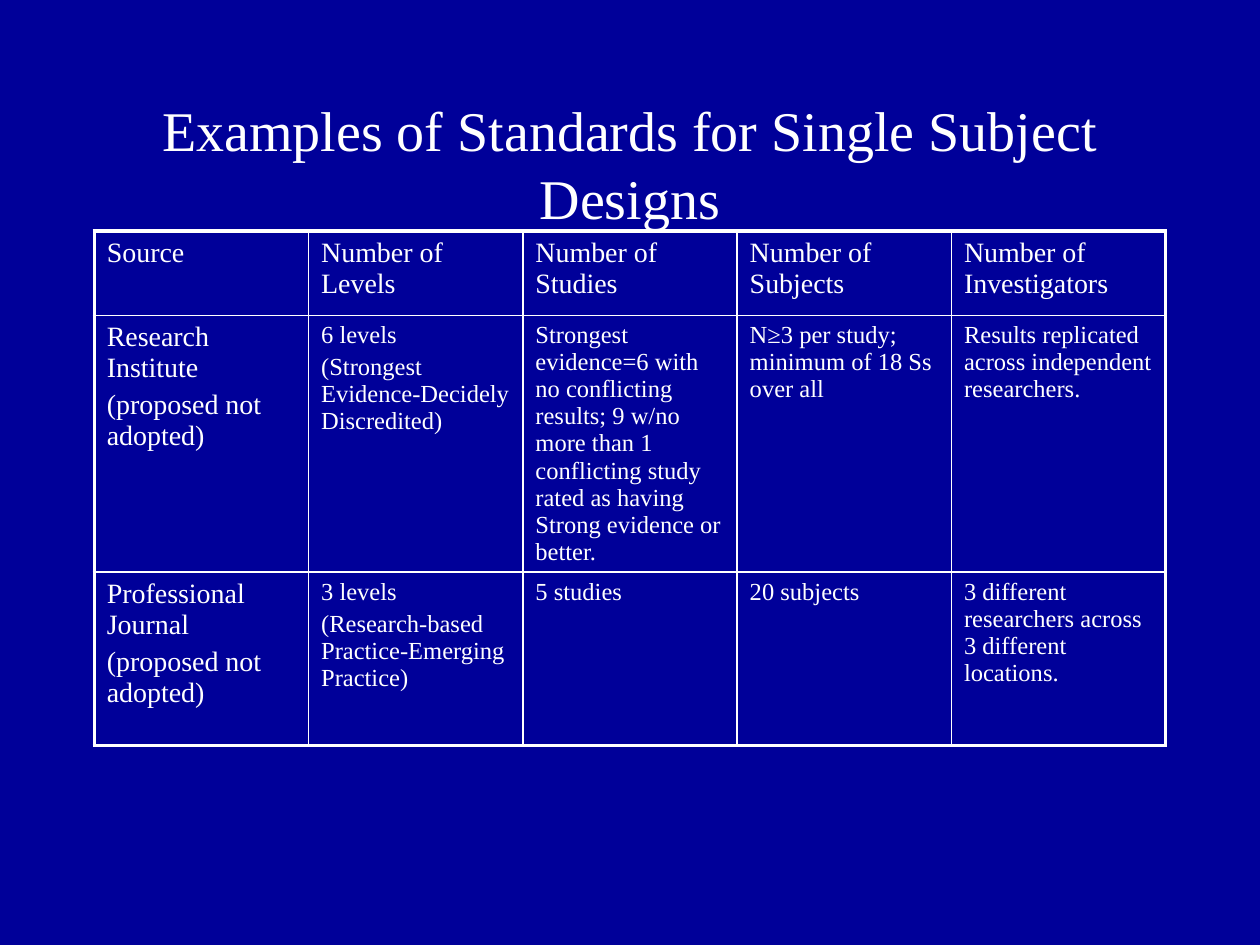
import pptx
import pptx.util
import pptx.dml.color
import pptx.enum.text
import pptx.oxml
import pptx.oxml.ns

Cm, Pt = pptx.util.Cm, pptx.util.Pt

TITLE = "Examples of Standards for Single Subject Designs"
ROWS = [
    [["Source"], ["Number of Levels"], ["Number of Studies"],
     ["Number of Subjects"], ["Number of Investigators"]],
    [["Research Institute", "(proposed not adopted)"],
     ["6 levels", "(Strongest Evidence-Decidely Discredited)"],
     ["Strongest evidence=6 with no conflicting results; 9 w/no more than 1 "
      "conflicting study rated as having Strong evidence or better."],
     ["N≥3 per study; minimum of 18 Ss over all"],
     ["Results replicated across independent researchers."]],
    [["Professional Journal", "(proposed not adopted)"],
     ["3 levels", "(Research-based Practice-Emerging Practice)"],
     ["5 studies"], ["20 subjects"],
     ["3 different researchers across 3 different locations."]],
]
ROW_HEIGHTS = [1.7, 5.16, 3.5]
COL_WIDTH = 4.32
THEME = {
    "font": "Times New Roman",
    "back": pptx.dml.color.RGBColor(0x00, 0x00, 0x99),
    "ink": pptx.dml.color.RGBColor(0xFF, 0xFF, 0xFF),
    "title": 32, "head": 16, "body": 14,
    "outer": 2.25, "inner": 1,
}


def add_run(p, text, size):
    r = p.add_run()
    r.text = text
    r.font.name = THEME["font"]
    r.font.size = Pt(size)
    r.font.color.rgb = THEME["ink"]


def set_borders(cell, widths):
    tcPr = cell._tc.get_or_add_tcPr()
    for i, (side, width) in enumerate(widths.items()):
        tcPr.insert(i, pptx.oxml.parse_xml(
            f'<a:ln{side} {pptx.oxml.ns.nsdecls("a")} w="{Pt(width)}">'
            f'<a:solidFill><a:srgbClr val="{THEME["ink"]}"/></a:solidFill>'
            f'</a:ln{side}>'))


def fill_cell(cell, paragraphs, size):
    cell.fill.background()
    tf = cell.text_frame
    for i, text in enumerate(paragraphs):
        p = tf.add_paragraph() if i else tf.paragraphs[0]
        if i:
            p.space_before = Pt(size * 0.2)
        add_run(p, text, size)


def add_title(s):
    sp = s.shapes.title
    sp.left, sp.top, sp.width, sp.height = Cm(1.9), Cm(1.7), Cm(21.6), Cm(3.18)
    tf = sp.text_frame
    tf.word_wrap = True
    tf.auto_size = pptx.enum.text.MSO_AUTO_SIZE.NONE
    tf.vertical_anchor = pptx.enum.text.MSO_ANCHOR.MIDDLE
    p = tf.paragraphs[0]
    p.alignment = pptx.enum.text.PP_ALIGN.CENTER
    add_run(p, TITLE, THEME["title"])


def add_standards_table(s):
    n_rows, n_cols = len(ROWS), len(ROWS[0])
    table = s.shapes.add_table(n_rows, n_cols, Cm(1.9), Cm(4.66),
                               Cm(COL_WIDTH * n_cols), Cm(sum(ROW_HEIGHTS))).table
    table.first_row = table.horz_banding = False
    for col in table.columns:
        col.width = Cm(COL_WIDTH)
    outer, inner = THEME["outer"], THEME["inner"]
    for y, row in enumerate(ROWS):
        table.rows[y].height = Cm(ROW_HEIGHTS[y])
        for x, paragraphs in enumerate(row):
            cell = table.cell(y, x)
            fill_cell(cell, paragraphs, THEME["body"] if x and y else THEME["head"])
            set_borders(cell, {
                "L": inner if x else outer,
                "R": outer if x == n_cols - 1 else inner,
                "T": inner if y else outer,
                "B": outer if y == n_rows - 1 else inner,
            })


def main():
    prs = pptx.Presentation()
    prs.slide_width, prs.slide_height = Cm(25.4), Cm(19.05)
    s = prs.slides.add_slide(prs.slide_layouts[5])
    s.background.fill.solid()
    s.background.fill.fore_color.rgb = THEME["back"]
    add_title(s)
    add_standards_table(s)
    prs.save("out.pptx")


if __name__ == "__main__":
    main()
